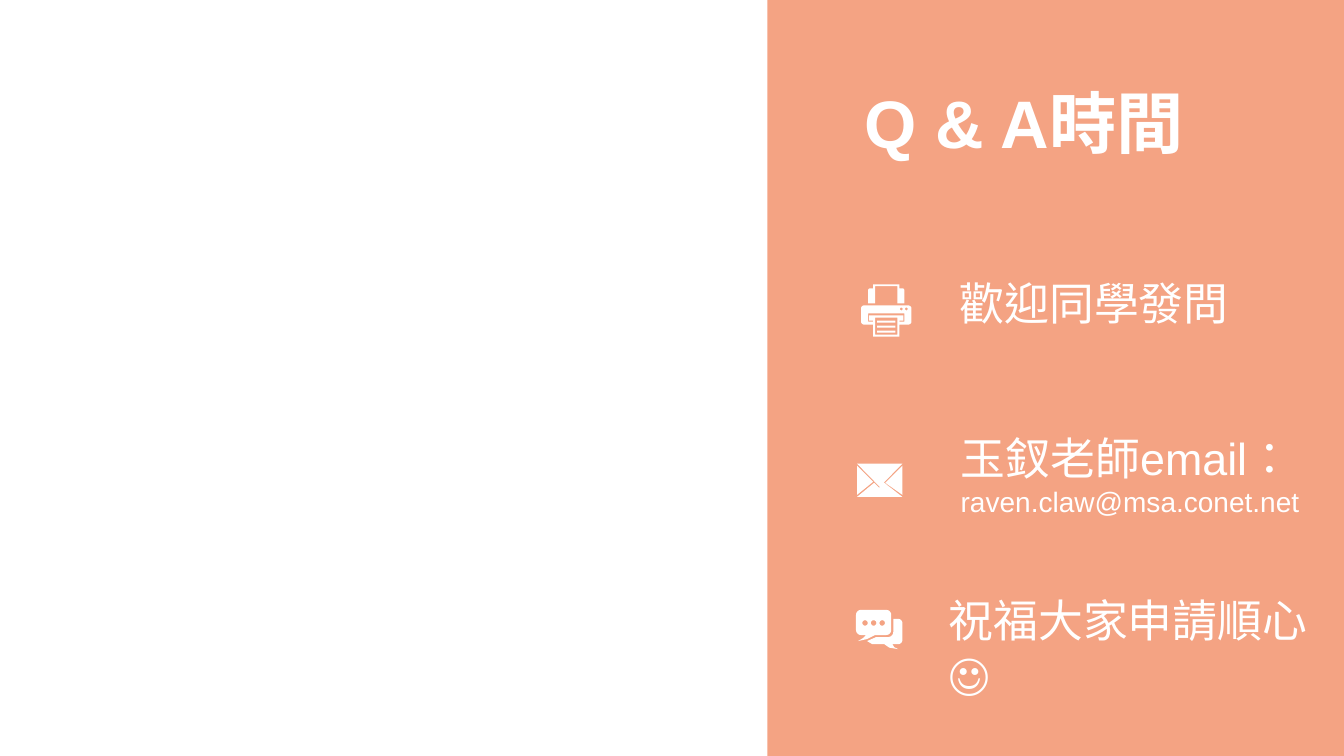
from math import cos, radians, sin

from lxml import etree
from pptx import Presentation
from pptx import util as u
from pptx.dml.color import RGBColor
from pptx.enum import lang, shapes, text
from pptx.oxml.ns import qn

COLUMNS, ROWS = 1333, 750
CELL = u.Inches(0.01)
FINE = 10
WHITE, CORAL = "FFFFFF", "F07C4F"


def paint(target, color):
    target.solid()
    target.fore_color.rgb = RGBColor.from_string(color)


def arc(x, y, radius, start, end, steps=6):
    angles = [radians(start + (end - start) * i / steps) for i in range(steps + 1)]
    return [(x + radius * cos(a), y + radius * sin(a)) for a in angles]


def dot(x, y, radius):
    return arc(x, y, radius, 0, 360, 20)


def bar(x, y, width, height):
    return [(x, y), (x + width, y), (x + width, y + height), (x, y + height)]


def envelope():
    return [
        [(27, 19), (45, 33), (0, 33), (17, 19), (22, 24)],
        [(45, 2), (45, 31), (28, 19)],
        [(0, 2), (16, 18), (0, 31)],
        [(0, 0), (45, 0), (22.5, 23)],
    ]


def printer():
    body = (arc(3, 24, 3, 180, 270) + arc(47, 24, 3, 270, 360) + arc(47, 37, 3, 0, 90)
            + [(38, 40), (38, 52), (12, 52), (12, 40)] + arc(3, 37, 3, 90, 180))
    feed = ([(12, 0), (38, 0), (38, 4)] + arc(41, 6, 2, 270, 360)
            + [(43, 19), (36, 19), (36, 2), (14, 2), (14, 19), (7, 19)]
            + arc(9, 6, 2, 180, 270) + [(12, 4)])
    slot = [(7, 29), (43, 29), (43, 37), (38, 37), (38, 36), (42, 36),
            (42, 31), (8, 31), (8, 36), (12, 36), (12, 37), (7, 37)]
    lines = [bar(16, y, 18, 2) for y in (36, 41, 46)]
    lights = [dot(x, 24.5, 1.4) for x in (40, 45)]
    return [body, feed, slot, bar(14, 33, 22, 17)] + lines + lights


def chat():
    front = (arc(5, 5, 5, 180, 270) + arc(30, 5, 5, 270, 360) + arc(30, 20, 5, 0, 90)
             + [(19, 25), (11, 29), (2, 31), (7, 28), (10, 25)] + arc(5, 20, 5, 90, 180))
    back = ([(37, 9)] + arc(42, 13, 4, 270, 360) + arc(42, 30, 4, 0, 90)
            + [(36, 34), (38, 37), (42, 39), (33, 37.5), (28, 34), (16, 34), (11, 31), (20, 27)]
            + arc(32, 22, 5, 90, 0))
    return [front, back] + [dot(x, 13, 2.7) for x in (9, 17.5, 26)]


def draw_icon(slide, left, top, outlines):
    fine = [[(round(x * FINE), round(y * FINE)) for x, y in outline] for outline in outlines]
    builder = slide.shapes.build_freeform(*fine[0][0], scale=CELL / FINE)
    builder.add_line_segments(fine[0][1:], close=True)
    for outline in fine[1:]:
        builder.move_to(*outline[0])
        builder.add_line_segments(outline[1:], close=True)
    icon = builder.convert_to_shape(left * CELL, top * CELL)
    icon.shadow.inherit = False
    paint(icon.fill, WHITE)
    icon.line.fill.background()


def write(slide, box, lines, bold=False, anchor=text.MSO_ANCHOR.MIDDLE):
    frame = slide.shapes.add_textbox(*(n * CELL for n in box)).text_frame
    frame.word_wrap = True
    frame.auto_size = text.MSO_AUTO_SIZE.SHAPE_TO_FIT_TEXT
    frame.vertical_anchor = anchor
    for i, (words, size) in enumerate(lines):
        paragraph = frame.add_paragraph() if i else frame.paragraphs[0]
        run = paragraph.add_run()
        run.text = words
        run.font.name = "Arial"
        run.font.size = u.Pt(size)
        run.font.bold = bold
        run.font.language_id = lang.MSO_LANGUAGE_ID.TRADITIONAL_CHINESE
        run.font.color.rgb = RGBColor.from_string(WHITE)


def draw_panel(slide, box):
    left, top = box[:2]
    panel = slide.shapes.add_shape(shapes.MSO_SHAPE.RECTANGLE, *(n * CELL for n in box))
    panel.shadow.inherit = False
    paint(panel.fill, CORAL)
    color = panel.fill._xPr.find(qn("a:solidFill"))[0]
    etree.SubElement(color, qn("a:alpha")).set("val", "70000")
    panel.line.fill.background()

    write(slide, (left + 87, top + 76, 427, 91), [("Q & A時間", 48)],
          bold=True, anchor=text.MSO_ANCHOR.TOP)
    messages = [
        ((181, 268, 336, 64), [("歡迎同學發問", 32)], (93, 282), printer()),
        ((182, 422, 370, 98), [("玉釵老師email：", 32), ("raven.claw@msa.conet.net", 20)],
         (89, 460), envelope()),
        ((170, 582, 382, 118), [("祝福大家申請順心☺", 32)], (88, 605), chat()),
    ]
    for (x, y, width, height), lines, (icon_x, icon_y), outlines in messages:
        write(slide, (left + x, top + y, width, height), lines)
        draw_icon(slide, left + icon_x, top + icon_y, outlines)


def main():
    deck = Presentation()
    deck.slide_width, deck.slide_height = COLUMNS * CELL, ROWS * CELL
    slide = deck.slides.add_slide(deck.slide_layouts[6])
    paint(slide.background.fill, WHITE)
    draw_panel(slide, (761, 0, COLUMNS - 761, ROWS))
    deck.save("out.pptx")


if __name__ == "__main__":
    main()
